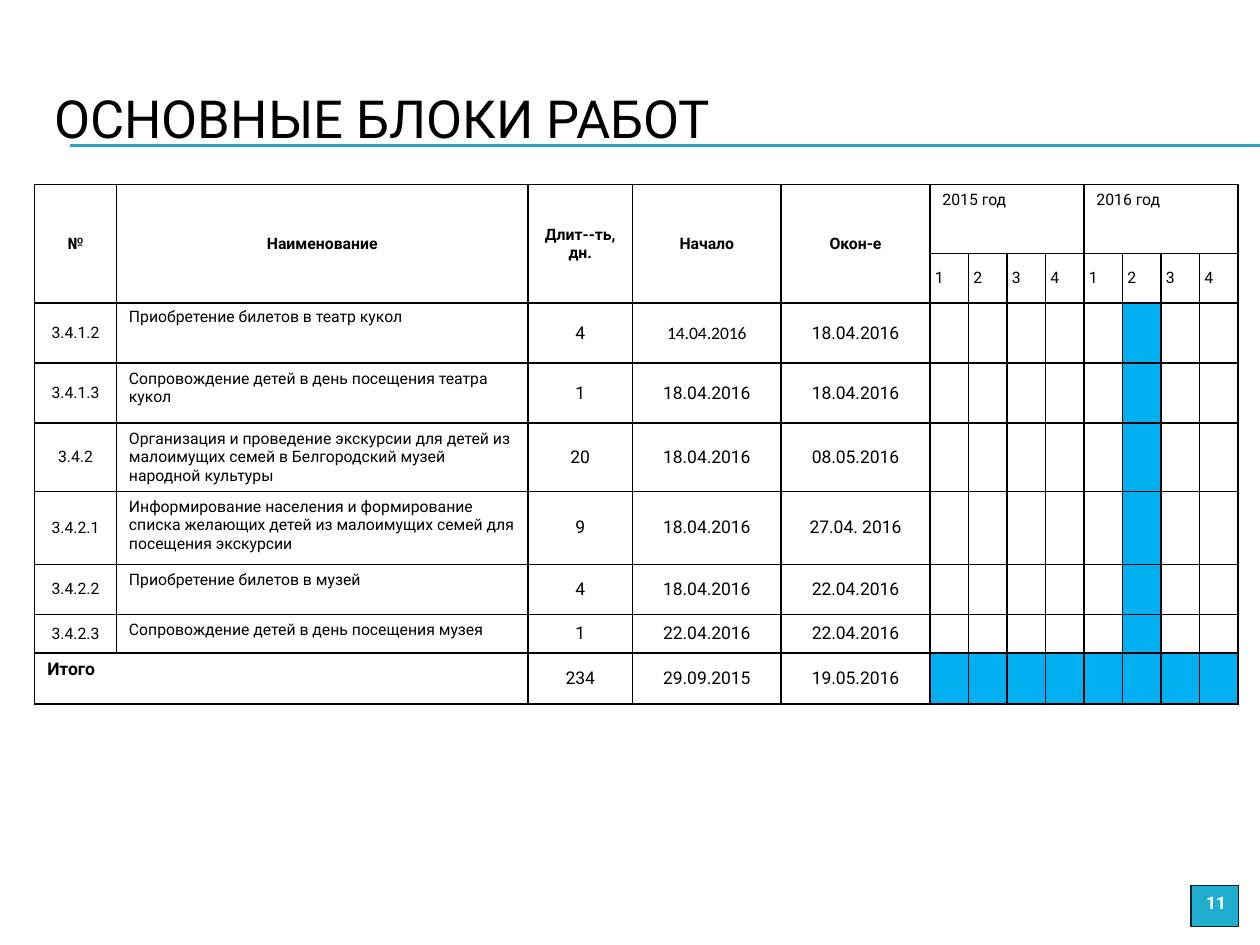
from lxml.etree import SubElement
from pptx import Presentation
from pptx.dml.color import RGBColor
from pptx.enum.shapes import MSO_CONNECTOR, MSO_SHAPE
from pptx.enum.text import MSO_ANCHOR, MSO_AUTO_SIZE, PP_ALIGN
from pptx.oxml import parse_xml
from pptx.oxml.ns import nsdecls, qn
from pptx.util import Pt

BLACK, WHITE, BLUE = "000000", "FFFFFF", "00B0F0"
LEFT, MID, RIGHT = PP_ALIGN.LEFT, PP_ALIGN.CENTER, PP_ALIGN.RIGHT
WIDTHS = [46.7, 235.2, 59.7, 85, 85] + [22] * 8
HEIGHTS = [39.4, 28, 34.3, 34.3, 38.9, 41.7, 28.6, 21.7, 29.1]
HEADS = ["№", "Наименование", "Длит--ть, дн.", "Начало", "Окон-е"]
YEARS = ["2015 год", "2016 год"]
TASKS = [
    ["3.4.1.2", "Приобретение билетов в театр кукол",
     "4", "14.04.2016", "18.04.2016"],
    ["3.4.1.3", "Сопровождение детей в день посещения театра кукол",
     "1", "18.04.2016", "18.04.2016"],
    ["3.4.2", "Организация и проведение экскурсии для детей из малоимущих "
     "семей в Белгородский музей народной культуры",
     "20", "18.04.2016", "08.05.2016"],
    ["3.4.2.1", "Информирование населения и формирование списка желающих "
     "детей из малоимущих семей для посещения экскурсии",
     "9", "18.04.2016", "27.04. 2016"],
    ["3.4.2.2", "Приобретение билетов в музей",
     "4", "18.04.2016", "22.04.2016"],
    ["3.4.2.3", "Сопровождение детей в день посещения музея",
     "1", "22.04.2016", "22.04.2016"],
]
TOTAL = ["234", "29.09.2015", "19.05.2016"]


def paint(hue):
    return RGBColor.from_string(hue)


class Deck:
    font = "Roboto"

    def __init__(self, slide):
        self.slide = slide

    def text(self, frame, words, size, hue=BLACK, bold=False, align=LEFT,
             font=None):
        frame.text = words
        frame.word_wrap = True
        for para in frame.paragraphs:
            para.alignment = align
            for run in para.runs:
                run.font.name = font or self.font
                run.font.size = Pt(size)
                run.font.bold = bold
                run.font.color.rgb = paint(hue)

    def title(self, words, left, top, width, height):
        shape = self.slide.shapes.title
        shape.left, shape.top = Pt(left), Pt(top)
        shape.width, shape.height = Pt(width), Pt(height)
        self.text(shape.text_frame, words, 30)
        shape.text_frame.auto_size = MSO_AUTO_SIZE.NONE
        shape.text_frame.vertical_anchor = MSO_ANCHOR.MIDDLE

    def line(self, left, right, top, hue):
        line = self.slide.shapes.add_connector(
            MSO_CONNECTOR.STRAIGHT, Pt(left), Pt(top), Pt(right), Pt(top))
        line.line.color.rgb = paint(hue)
        line.line.width = Pt(0.75)
        SubElement(line._element.spPr, qn("a:effectLst"))

    def badge(self, words, left, top, width, height):
        box = self.slide.shapes.add_shape(
            MSO_SHAPE.RECTANGLE, Pt(left), Pt(top), Pt(width), Pt(height))
        box.shadow.inherit = False
        box.fill.solid()
        box.fill.fore_color.rgb = paint("1FAECD")
        box.line.color.rgb = paint("062329")
        box.line.width = Pt(0.75)
        self.text(box.text_frame, words, 10, WHITE, True, RIGHT)
        box.text_frame.vertical_anchor = MSO_ANCHOR.TOP

    def table(self, left, top, widths, heights):
        grid = self.slide.shapes.add_table(
            len(heights), len(widths), Pt(left), Pt(top),
            Pt(sum(widths)), Pt(sum(heights))).table
        grid.first_row = grid.horz_banding = False
        for col, width in zip(grid.columns, widths):
            col.width = Pt(width)
        for row, height in zip(grid.rows, heights):
            row.height = Pt(height)
        for cell in (cell for row in grid.rows for cell in row.cells):
            self.fill(cell, WHITE)
            self.inset(cell, 0, 0)
            self.frame(cell)
        return grid

    def fill(self, cell, hue):
        cell.fill.solid()
        cell.fill.fore_color.rgb = paint(hue)

    def inset(self, cell, side, end):
        cell.margin_left = cell.margin_right = Pt(side)
        cell.margin_top = cell.margin_bottom = Pt(end)

    def frame(self, cell):
        props = cell._tc.get_or_add_tcPr()
        for spot, tag in enumerate(("lnL", "lnR", "lnT", "lnB")):
            props.insert(spot, parse_xml(
                f'<a:{tag} {nsdecls("a")} w="{Pt(1)}"><a:solidFill>'
                f'<a:srgbClr val="{BLACK}"/></a:solidFill></a:{tag}>'))

    def cell(self, cell, words, size=9, bold=False, align=MID, side=7.2,
             end=3.6, anchor=MSO_ANCHOR.MIDDLE, font=None):
        self.text(cell.text_frame, words, size, BLACK, bold, align, font)
        self.inset(cell, side, end)
        cell.vertical_anchor = anchor


def main():
    show = Presentation()
    show.slide_width, show.slide_height = Pt(720), Pt(540)
    deck = Deck(show.slides.add_slide(show.slide_layouts[5]))
    for top in (82.8, 83.5):
        deck.line(40.3, 720, top, "2DA2BF")
    deck.title("ОСНОВНЫЕ БЛОКИ РАБОТ", 23.8, 33.8, 684, 66.2)

    grid = deck.table(19.8, 105.5, WIDTHS, HEIGHTS)
    for col, head in enumerate(HEADS):
        grid.cell(0, col).merge(grid.cell(1, col))
        deck.cell(grid.cell(0, col), head, bold=True)
    for num, year in enumerate(YEARS):
        col = 5 + 4 * num
        grid.cell(0, col).merge(grid.cell(0, col + 3))
        deck.cell(grid.cell(0, col), year, align=LEFT, anchor=MSO_ANCHOR.TOP)
        for part in range(4):
            deck.cell(grid.cell(1, col + part), str(part + 1), align=LEFT,
                      side=2.9)

    for row, task in enumerate(TASKS, 2):
        end = 2.9 if row == 2 else 3.6
        for col, words in enumerate(task):
            name = col == 1
            deck.cell(grid.cell(row, col), words, 10 if col > 1 else 9,
                      align=LEFT if name else MID, end=end,
                      anchor=MSO_ANCHOR.TOP if name else MSO_ANCHOR.MIDDLE,
                      font="Calibri" if (row, col) == (2, 3) else None)
        deck.fill(grid.cell(row, 10), BLUE)

    last = len(HEIGHTS) - 1
    grid.cell(last, 0).merge(grid.cell(last, 1))
    deck.cell(grid.cell(last, 0), "Итого", 10, True, LEFT,
              anchor=MSO_ANCHOR.TOP)
    for col, words in enumerate(TOTAL, 2):
        deck.cell(grid.cell(last, col), words, 10)
    for col in range(5, len(WIDTHS)):
        deck.fill(grid.cell(last, col), BLUE)

    deck.badge("11", 680.6, 506, 27.2, 23.3)
    show.save("out.pptx")


if __name__ == "__main__":
    main()
